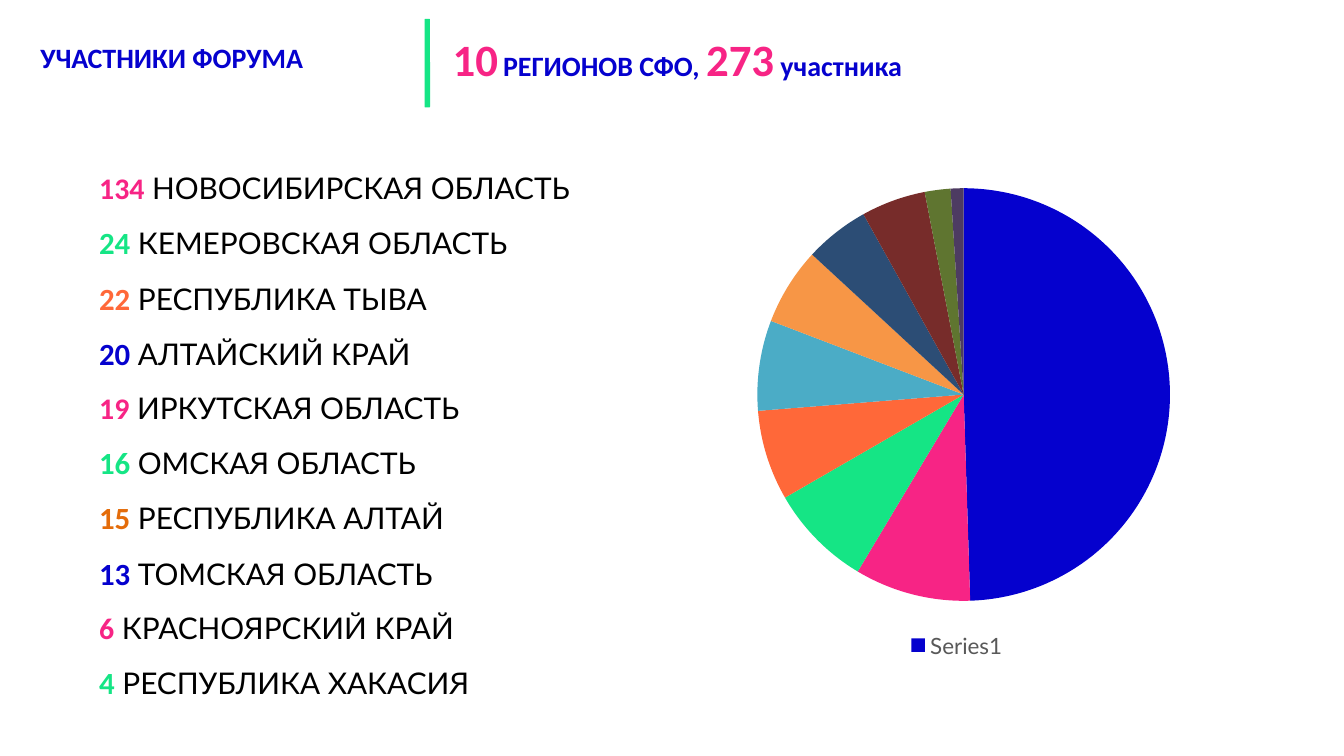
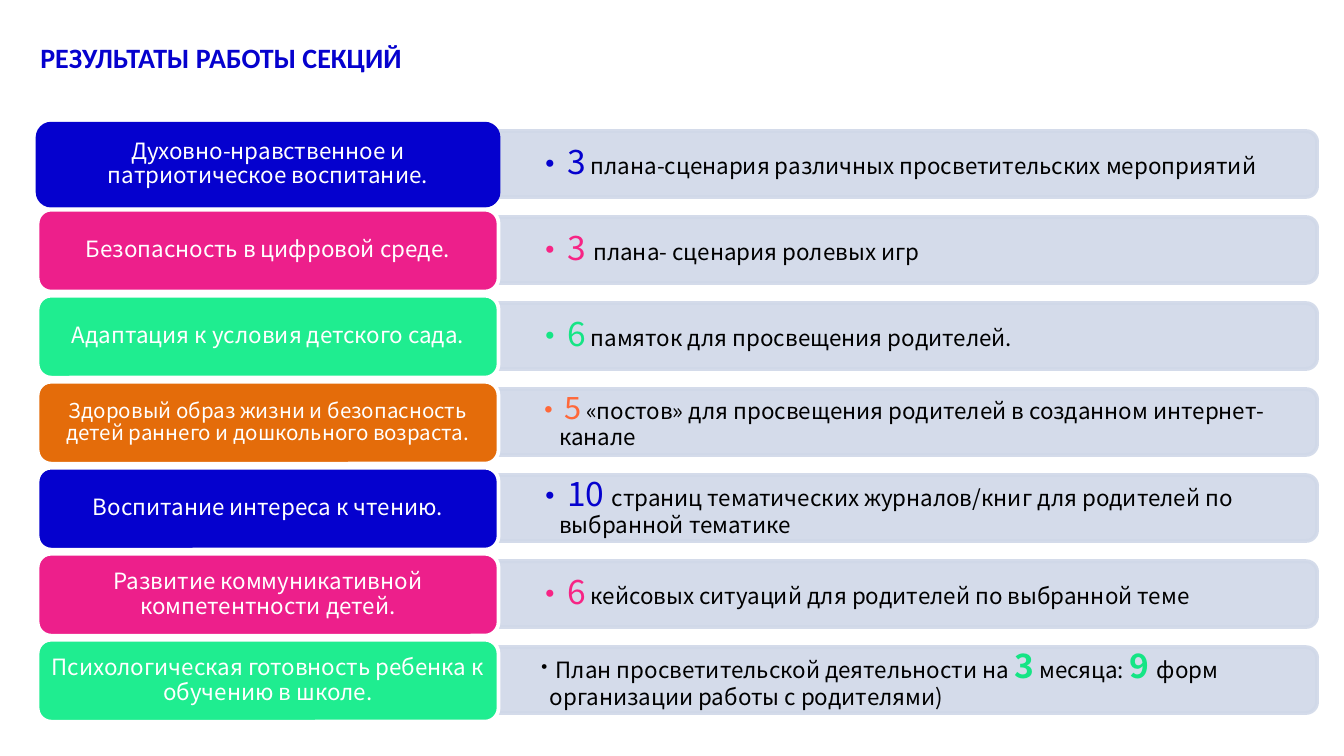
import dataclasses

import lxml.etree
import pptx
import pptx.chart.data
import pptx.dml.color
import pptx.enum.chart
import pptx.enum.shapes
import pptx.enum.text
import pptx.oxml.ns
import pptx.util

Inches = pptx.util.Inches
Pt = pptx.util.Pt
qn = pptx.oxml.ns.qn
SHAPE = pptx.enum.shapes.MSO_SHAPE
ALIGN = pptx.enum.text.PP_ALIGN
ANCHOR = pptx.enum.text.MSO_ANCHOR
AUTO = pptx.enum.text.MSO_AUTO_SIZE


@dataclasses.dataclass(frozen=True)
class Theme:
    blue: str = "0501CE"
    pink: str = "F72485"
    green: str = "15E585"
    orange: str = "FF6839"
    amber: str = "E46C0A"
    label_pink: str = "ED1F8B"
    label_green: str = "1FED90"
    bar: str = "D0D8E8"
    black: str = "000000"
    white: str = "FFFFFF"
    grey: str = "595959"
    head_font: str = "Calibri"
    list_font: str = "Lato"
    body_font: str = "Noto Sans CJK SC"
    title: float = 15
    big: float = 24
    item: float = 16
    figure: float = 18
    body: float = 12
    small: float = 11


T = Theme()

REGIONS = [
    ("134", "НОВОСИБИРСКАЯ ОБЛАСТЬ", T.pink),
    ("24", "КЕМЕРОВСКАЯ ОБЛАСТЬ", T.green),
    ("22", "РЕСПУБЛИКА ТЫВА", T.orange),
    ("20", "АЛТАЙСКИЙ КРАЙ", T.blue),
    ("19", "ИРКУТСКАЯ ОБЛАСТЬ", T.pink),
    ("16", "ОМСКАЯ ОБЛАСТЬ", T.green),
    ("15", "РЕСПУБЛИКА АЛТАЙ", T.amber),
    ("13", "ТОМСКАЯ ОБЛАСТЬ", T.blue),
    ("6", "КРАСНОЯРСКИЙ КРАЙ", T.pink),
    ("4", "РЕСПУБЛИКА ХАКАСИЯ", T.green),
]
SHARES = [49, 9, 8, 7, 7, 6, 5, 5, 2, 1]
SLICES = [T.blue, T.pink, T.green, T.orange, "4BACC6", "F79646",
          "2C4D75", "772C2A", "5F7530", "4D3B62"]


def figure(text, color, size=T.figure, bold=False):
    return text, size, color, T.body_font, bold


def plain(text):
    return text, T.body, T.black, T.body_font, False


# Section label, label size, label fill, runs of the result
SECTIONS = [
    ("Духовно-нравственное и патриотическое воспитание.", T.body, T.blue,
     [figure("3", T.blue),
      plain(" плана-сценария различных просветительских мероприятий")]),
    ("Безопасность в цифровой среде.", T.body, T.label_pink,
     [figure("3 ", T.pink), plain("плана- сценария ролевых игр")]),
    ("Адаптация к условия детского сада.", T.body, T.label_green,
     [figure("6", T.green), plain(" памяток для просвещения родителей.")]),
    ("Здоровый образ жизни и безопасность детей раннего и дошкольного возраста.",
     T.small, T.amber,
     [figure("5", T.orange, 16.5),
      plain(" «постов» для просвещения родителей в созданном интернет-канале")]),
    ("Воспитание интереса к чтению.", T.body, T.blue,
     [figure("10 ", T.blue),
      plain("страниц тематических журналов/книг для родителей по выбранной тематике")]),
    ("Развитие коммуникативной компетентности детей.", T.body, T.label_pink,
     [figure("6", T.pink),
      plain(" кейсовых ситуаций для родителей по выбранной теме")]),
    ("Психологическая готовность ребенка к обучению в школе.", T.body, T.label_green,
     [plain("План просветительской деятельности на "),
      figure("3", T.green, bold=True), plain(" месяца: "),
      figure("9 ", T.green, bold=True), plain("форм"), figure(" ", T.green),
      plain("организации работы с родителями)")]),
]


def rgb(color):
    return pptx.dml.color.RGBColor.from_string(color)


def add_runs(p, runs):
    for text, size, color, font, bold in runs:
        r = p.add_run()
        r.text = text
        r.font.size = Pt(size)
        r.font.name = font
        r.font.bold = bold
        r.font.color.rgb = rgb(color)


def set_margins(tf, x, y):
    tf.margin_left = tf.margin_right = Inches(x)
    tf.margin_top = tf.margin_bottom = Inches(y)


def add_slide(prs, title):
    slide = prs.slides.add_slide(prs.slide_layouts[5])
    sp = slide.shapes.title
    sp.left, sp.top = Inches(0.23), Inches(0.18)
    sp.width, sp.height = Inches(9.77), Inches(0.52)
    tf = sp.text_frame
    tf.auto_size = AUTO.NONE
    tf.vertical_anchor = ANCHOR.MIDDLE
    set_margins(tf, 0.07, 0.04)
    p = tf.paragraphs[0]
    p.alignment = ALIGN.LEFT
    p.line_spacing = Pt(16.5)
    add_runs(p, [(title, T.title, T.blue, T.head_font, True)])
    return slide


def add_text(slide, x, y, w, h, paragraphs, spacing=None, auto=AUTO.SHAPE_TO_FIT_TEXT):
    sp = slide.shapes.add_textbox(Inches(x), Inches(y), Inches(w), Inches(h))
    tf = sp.text_frame
    tf.word_wrap = True
    tf.auto_size = auto
    for i, runs in enumerate(paragraphs):
        p = tf.add_paragraph() if i else tf.paragraphs[0]
        if spacing:
            p.line_spacing = spacing
        add_runs(p, runs)
    return tf


def add_block(slide, kind, x, y, w, h, fill, line=None):
    sp = slide.shapes.add_shape(kind, Inches(x), Inches(y), Inches(w), Inches(h))
    sp.shadow.inherit = False
    sp.fill.solid()
    sp.fill.fore_color.rgb = rgb(fill)
    if line:
        sp.line.color.rgb = rgb(line)
        sp.line.width = Pt(2)
    else:
        sp.line.fill.background()
    return sp


def add_pie(slide, x, y, w, h):
    data = pptx.chart.data.CategoryChartData()
    data.categories = [""] * len(SHARES)
    data.add_series("Series1", SHARES)
    chart = slide.shapes.add_chart(pptx.enum.chart.XL_CHART_TYPE.PIE, Inches(x),
                                   Inches(y), Inches(w), Inches(h), data).chart
    chart.has_title = False
    chart.font.size = Pt(10)
    chart.font.name = T.body_font
    chart.font.color.rgb = rgb(T.black)
    chart.has_legend = True
    legend = chart.legend
    legend.position = pptx.enum.chart.XL_LEGEND_POSITION.BOTTOM
    legend.include_in_layout = False
    legend.font.size = Pt(T.body)
    legend.font.name = T.list_font
    legend.font.color.rgb = rgb(T.grey)

    plot = chart.plots[0]
    plot.vary_by_categories = False
    series = plot.series[0]
    series.format.fill.solid()
    series.format.fill.fore_color.rgb = rgb(T.blue)
    for i, color in enumerate(SLICES):
        fill = series.points[i].format.fill
        fill.solid()
        fill.fore_color.rgb = rgb(color)

    # Fixed place of the pie inside the chart frame
    area = chart._chartSpace.find(".//" + qn("c:plotArea"))
    for old in area.findall(qn("c:layout")):
        area.remove(old)
    layout = lxml.etree.Element(qn("c:layout"))
    area.insert(0, layout)
    manual = lxml.etree.SubElement(layout, qn("c:manualLayout"))
    for tag, val in [("layoutTarget", "inner"), ("xMode", "edge"), ("yMode", "edge"),
                     ("x", "0.222"), ("y", "0.015"), ("w", "0.575"), ("h", "0.863")]:
        lxml.etree.SubElement(manual, qn("c:" + tag)).set("val", val)


def add_bullet(p, indent):
    pPr = p._p.get_or_add_pPr()
    pPr.set("marL", str(Inches(indent)))
    pPr.set("indent", str(-Inches(indent)))
    lxml.etree.SubElement(pPr, qn("a:buFont")).set("typeface", T.body_font)
    lxml.etree.SubElement(pPr, qn("a:buChar")).set("char", "•")


def add_section(slide, y, label, size, fill, line, runs, indent):
    # Result bar: a rotated shape with its rounded end on the right
    length, depth = 6.1, 0.49
    bar = add_block(slide, SHAPE.ROUND_2_SAME_RECTANGLE, 6.75 - depth / 2,
                    y + 0.3 - length / 2, depth, length, T.bar, T.bar)
    bar.rotation = 90
    for color in bar._element.spPr.iter(qn("a:srgbClr")):
        lxml.etree.SubElement(color, qn("a:alpha")).set("val", "90000")

    tf = add_text(slide, 3.7, y + 0.08, 6.07, 0.44, [runs], 0.9, AUTO.NONE)
    tf.vertical_anchor = ANCHOR.MIDDLE
    set_margins(tf, 0.27, 0.14)
    tf.paragraphs[0].level = 1
    add_bullet(tf.paragraphs[0], indent)

    # Section label
    sp = add_block(slide, SHAPE.ROUNDED_RECTANGLE, 0.28, y, 3.43, 0.61, fill, line)
    tf = sp.text_frame
    tf.word_wrap = True
    tf.vertical_anchor = ANCHOR.MIDDLE
    set_margins(tf, 0.05, 0.03)
    p = tf.paragraphs[0]
    p.alignment = ALIGN.CENTER
    p.line_spacing = 0.9
    add_runs(p, [(label, size, T.white, T.body_font, False)])


def build_participants(prs):
    slide = add_slide(prs, "УЧАСТНИКИ ФОРУМА")
    add_pie(slide, 4.45, 1.32, 5.34, 3.62)
    rows = []
    for count, region, color in REGIONS:
        size = T.item if color == T.pink else T.item + 0.5
        rows.append([(count, size, color, T.head_font, True),
                     (" " + region, T.item, T.black, T.list_font, False)])
    add_text(slide, 0.64, 1.08, 4.34, 4.14, rows, 1.5)

    # Divider and totals
    add_block(slide, SHAPE.ROUNDED_RECTANGLE, 3.16, 0.14, 0.04, 0.66, T.green)
    add_text(slide, 3.27, 0.19, 4.34, 0.5, [[
        ("10", T.big, T.pink, T.head_font, True),
        (" ", 10.5, T.black, T.list_font, False),
        ("РЕГИОНОВ СФО, ", T.title, T.blue, T.head_font, True),
        ("273", T.big, T.pink, T.head_font, True),
        (" участника", T.title, T.blue, T.head_font, True),
    ]])


def build_results(prs):
    slide = add_slide(prs, "РЕЗУЛЬТАТЫ РАБОТЫ СЕКЦИЙ")
    last = len(SECTIONS) - 1
    for i, (label, size, fill, runs) in enumerate(SECTIONS):
        line = T.white if i else fill
        indent = 0.12 if i == last else 0.19
        add_section(slide, 0.92 + 0.64 * i, label, size, fill, line, runs, indent)


def main():
    prs = pptx.Presentation()
    # Widescreen, 16:9
    prs.slide_width = Inches(10)
    prs.slide_height = prs.slide_width * 9 // 16
    build_participants(prs)
    build_results(prs)
    prs.save("out.pptx")


if __name__ == "__main__":
    main()
